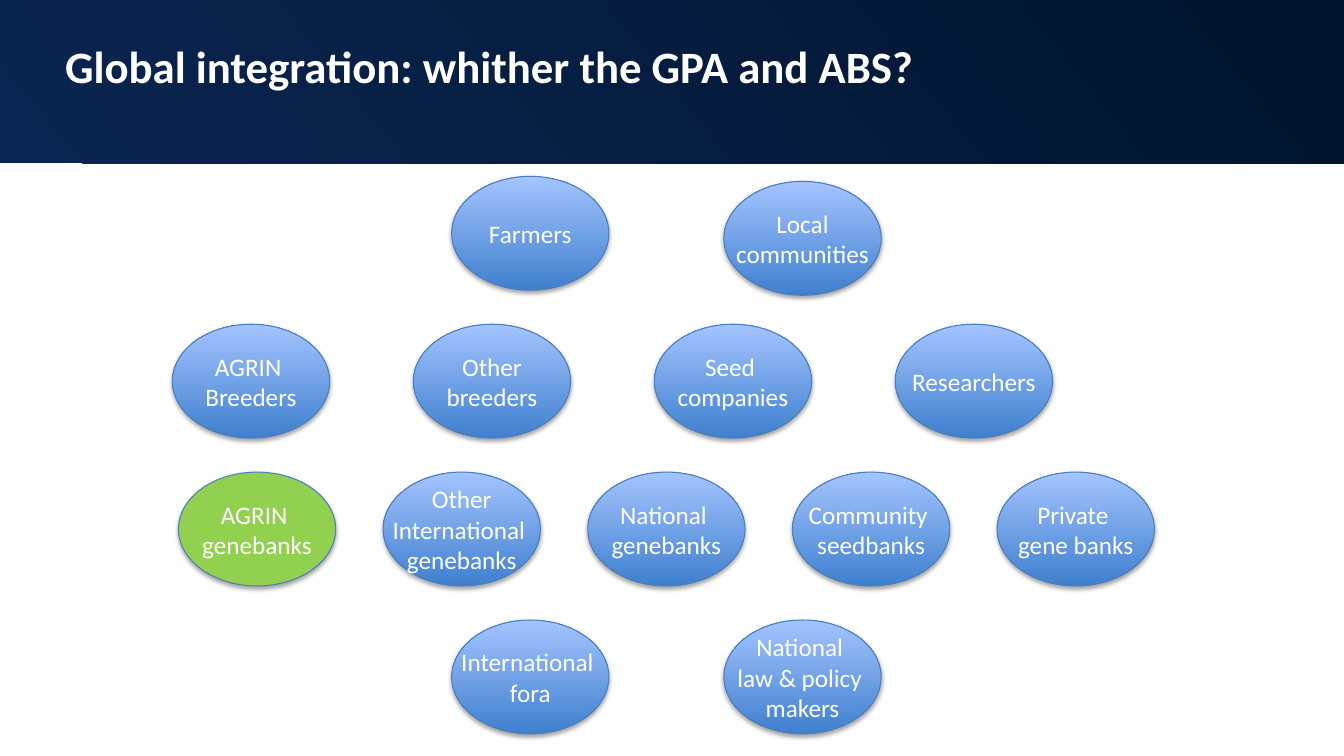
from lxml import etree
from pptx import Presentation, util as u
from pptx.dml.color import RGBColor
from pptx.enum import shapes, text
from pptx.oxml.ns import qn

WIDE, HIGH = 13.33, 7.5
NODE = (1.56, 1.13)
TOP, STEP = 1.75, 1.467
BLUE = ("3F80CE", "A4C4FF", 90)
GREEN = "92D050"
ROWS = [
    (4.48, 2.7, ["Farmers", "Local\ncommunities"]),
    (1.71, 2.39, ["AGRIN \nBreeders", "Other\nbreeders",
                  "Seed \ncompanies", "Researchers"]),
    (1.77, 2.03, ["AGRIN \ngenebanks", "Other\nInternational \ngenebanks",
                  "National \ngenebanks", "Community \nseedbanks",
                  "Private \ngene banks"]),
    (4.48, 2.7, ["International \nfora", "National \nlaw & policy \nmakers"]),
]
FILLS = {"AGRIN \ngenebanks": GREEN}
DROPS = {"Local\ncommunities": 0.05}


def hue(code):
    return RGBColor.from_string(code)


def place(box):
    return [u.Inches(n) for n in box]


def style(item, values):
    for name, value in values.items():
        setattr(item, name, value)


def paint(shape, fill):
    if isinstance(fill, str):
        shape.fill.solid()
        shape.fill.fore_color.rgb = hue(fill)
        return
    *codes, angle = fill
    shape.fill.gradient()
    shape.fill.gradient_angle = angle
    for stop, code, spot in zip(shape.fill.gradient_stops, codes, (0, 1)):
        stop.color.rgb = hue(code)
        stop.position = spot


def write(shape, words, size, frame, align, bold=False):
    style(shape.text_frame, frame)
    para = shape.text_frame.paragraphs[0]
    para.text = words
    para.alignment = align
    for run in para.runs:
        style(run.font, {"name": "Calibri", "size": u.Pt(size), "bold": bold})
        run.font.color.rgb = hue("FFFFFF")


def shade(shape):
    shape.shadow.inherit = False
    effects = shape._element.spPr.find(qn("a:effectLst"))
    outer = etree.SubElement(effects, qn("a:outerShdw"), blurRad="40000",
                             dist="23000", dir="5400000", rotWithShape="0")
    color = etree.SubElement(outer, qn("a:srgbClr"), val="000000")
    etree.SubElement(color, qn("a:alpha"), val="35000")


def header(slide, box):
    left, top, width, height = box
    band = slide.shapes.add_shape(shapes.MSO_SHAPE.RECTANGLE, *place(box))
    band.shadow.inherit = False
    paint(band, ("0A2551", "00142D", 39))
    band.line.fill.background()
    title = slide.shapes.add_textbox(*place((
        left + 0.041 * width, top + 0.204 * height,
        0.81 * width, 0.53 * height)))
    write(title, "Global integration: whither the GPA and ABS?", 32,
          {"word_wrap": True, "vertical_anchor": text.MSO_ANCHOR.TOP},
          text.PP_ALIGN.LEFT, True)


def node(slide, box, words):
    oval = slide.shapes.add_shape(shapes.MSO_SHAPE.OVAL, *place(box))
    paint(oval, FILLS.get(words, BLUE))
    oval.line.color.rgb = hue("4B7EBC")
    oval.line.width = u.Pt(0.75)
    shade(oval)
    write(oval, words, 18,
          {"word_wrap": False, "vertical_anchor": text.MSO_ANCHOR.MIDDLE},
          text.PP_ALIGN.CENTER)


def network(slide, top):
    for row, (left, gap, names) in enumerate(ROWS):
        for col, words in enumerate(names):
            drop = DROPS.get(words, 0)
            node(slide, (left + col * gap, top + row * STEP + drop, *NODE), words)


def main():
    deck = Presentation()
    style(deck, {"slide_width": u.Inches(WIDE), "slide_height": u.Inches(HIGH)})
    slide = deck.slides.add_slide(deck.slide_layouts[6])
    header(slide, (0, 0, WIDE, 0.216 * HIGH))
    network(slide, TOP)
    deck.save("out.pptx")


if __name__ == "__main__":
    main()
